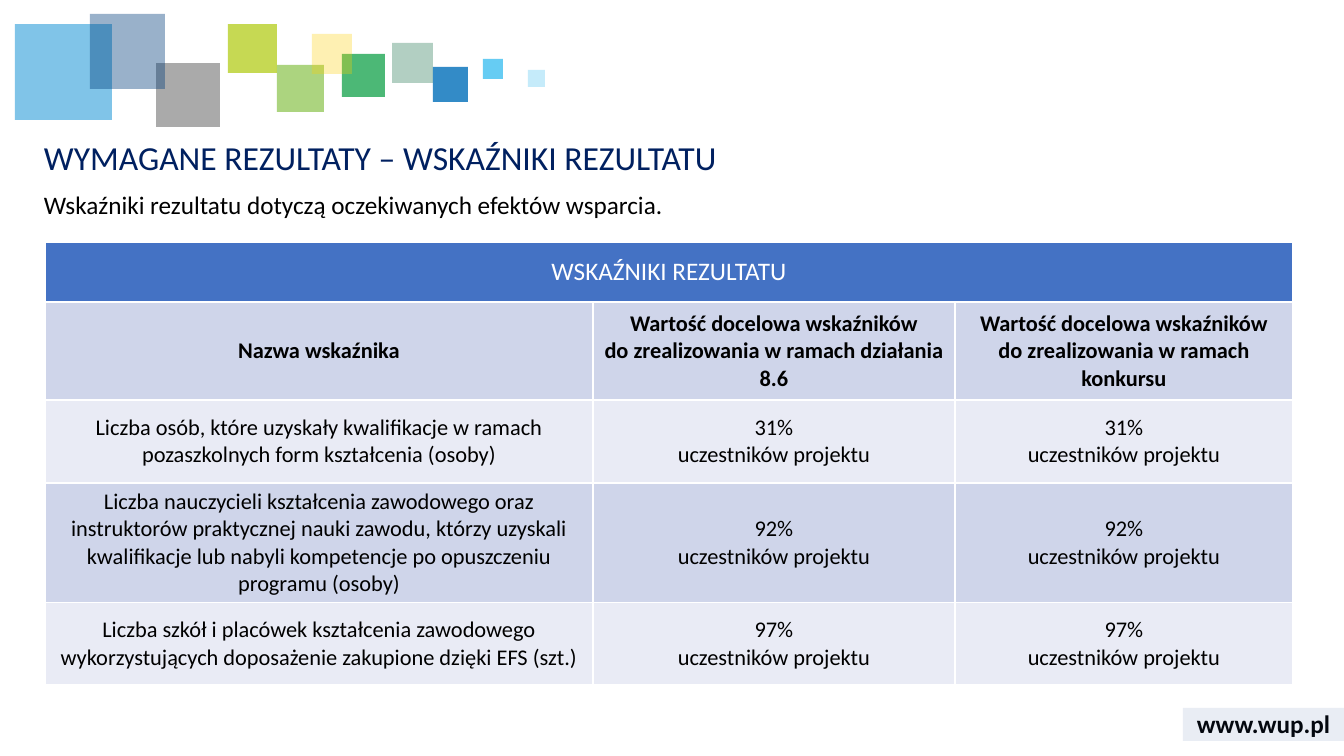
from lxml import etree
from pptx import Presentation
from pptx.dml.color import RGBColor
from pptx.enum.shapes import MSO_SHAPE
from pptx.enum.text import MSO_ANCHOR, PP_ALIGN
from pptx.oxml.ns import qn
from pptx.util import Pt

RECT = MSO_SHAPE.RECTANGLE
TOP, MIDDLE = MSO_ANCHOR.TOP, MSO_ANCHOR.MIDDLE
LEFT, CENTER = PP_ALIGN.LEFT, PP_ALIGN.CENTER
PX = 12192000 / 1344


def rgb(value):
    return RGBColor.from_string(value)


def write(tf, text, size=16, color="000000", bold=False, align=CENTER, spacing=1.0):
    tf.word_wrap = True
    tf.text = text
    for p in tf.paragraphs:
        p.alignment = align
        p.line_spacing = spacing
        for br in p._p.findall(qn("a:br")):
            etree.SubElement(br, qn("a:rPr"), sz=str(size * 100))
        for r in p.runs:
            r.font.name = "Calibri"
            r.font.size = Pt(size)
            r.font.bold = bold
            r.font.color.rgb = rgb(color)


prs = Presentation()
prs.slide_width = round(1344 * PX)
prs.slide_height = round(756 * PX)
slide = prs.slides.add_slide(prs.slide_layouts[6])

texts = [
    (1183, 703, 161, 40, MIDDLE, "www.wup.pl", dict(size=18, bold=True)),
    (34, 137, 1251, 55, TOP, "WYMAGANE REZULTATY – WSKAŹNIKI REZULTATU",
     dict(size=24, color="002060", align=LEFT, spacing=0.9)),
    (34, 188, 1251, 48, TOP, "Wskaźniki rezultatu dotyczą oczekiwanych efektów wsparcia.",
     dict(size=18, align=LEFT, spacing=0.9)),
]
for x, y, w, h, anchor, text, style in texts:
    tf = slide.shapes.add_textbox(*[round(v * PX) for v in (x, y, w, h)]).text_frame
    tf.vertical_anchor = anchor
    write(tf, text, **style)

rects = [
    (392, 43, 41, 40, "006138", 30),
    (433, 67, 35, 35, "006EB9", 80),
    (342, 54, 43, 43, "009A3C", 70),
    (15, 24, 97, 96, "028BD3", 50),
    (277, 65, 47, 47, "75B82A", 60),
    (156, 63, 64, 64, "575757", 50),
    (90, 14, 75, 75, "003D7C", 40),
    (483, 59, 20, 20, "40C0F1", 80),
    (228, 24, 49, 49, "AFCA0B", 70),
    (312, 34, 40, 40, "FED000", 30),
    (528, 70, 17, 17, "40C0F1", 30),
    (1183, 708, 161, 33, "2F5597", 10),
]
for x, y, w, h, color, opacity in rects:
    sp = slide.shapes.add_shape(RECT, *[round(v * PX) for v in (x, y, w, h)])
    sp.shadow.inherit = False
    sp.line.fill.background()
    sp.fill.solid()
    sp.fill.fore_color.rgb = rgb(color)
    clr = sp._element.spPr.find(".//" + qn("a:srgbClr"))
    etree.SubElement(clr, qn("a:alpha"), val=str(opacity * 1000))

col_widths = [548, 362, 338]
row_heights = [60, 98, 83, 120, 82]
target = "Wartość docelowa wskaźników\vdo zrealizowania w ramach "
indicators = [
    ("Liczba osób, które uzyskały kwalifikacje w ramach pozaszkolnych form kształcenia (osoby)", "31%"),
    ("Liczba nauczycieli kształcenia zawodowego oraz instruktorów praktycznej nauki zawodu, "
     "którzy uzyskali kwalifikacje lub nabyli kompetencje po opuszczeniu programu (osoby)", "92%"),
    ("Liczba szkół i placówek kształcenia zawodowego wykorzystujących doposażenie "
     "zakupione dzięki EFS (szt.)", "97%"),
]
rows = [["WSKAŹNIKI REZULTATU", "", ""],
        ["Nazwa wskaźnika", target + "działania 8.6", target + "konkursu"]]
for name, share in indicators:
    rows.append([name] + [share + "\nuczestników projektu"] * 2)
row_fills = ["4472C4", "CFD5EA", "E9EBF5", "CFD5EA", "E9EBF5"]
row_styles = [dict(size=18, color="FFFFFF"), dict(bold=True), {}, {}, {}]

table = slide.shapes.add_table(
    len(rows), len(col_widths), round(45 * PX), round(242 * PX),
    round(sum(col_widths) * PX), round(sum(row_heights) * PX)).table
for col, width in zip(table.columns, col_widths):
    col.width = round(width * PX)
for row, height in zip(table.rows, row_heights):
    row.height = round(height * PX)
table.cell(0, 0).merge(table.cell(0, 2))
for i, row in enumerate(rows):
    for j, text in enumerate(row):
        cell = table.cell(i, j)
        cell.vertical_anchor = MIDDLE
        tcPr = cell._tc.get_or_add_tcPr()
        for side in ("a:lnL", "a:lnR", "a:lnT", "a:lnB"):
            ln = etree.SubElement(tcPr, qn(side), w="12700")
            fill = etree.SubElement(ln, qn("a:solidFill"))
            etree.SubElement(fill, qn("a:srgbClr"), val="FFFFFF")
        cell.fill.solid()
        cell.fill.fore_color.rgb = rgb(row_fills[i])
        if text:
            write(cell.text_frame, text, **row_styles[i])

prs.save("out.pptx")
